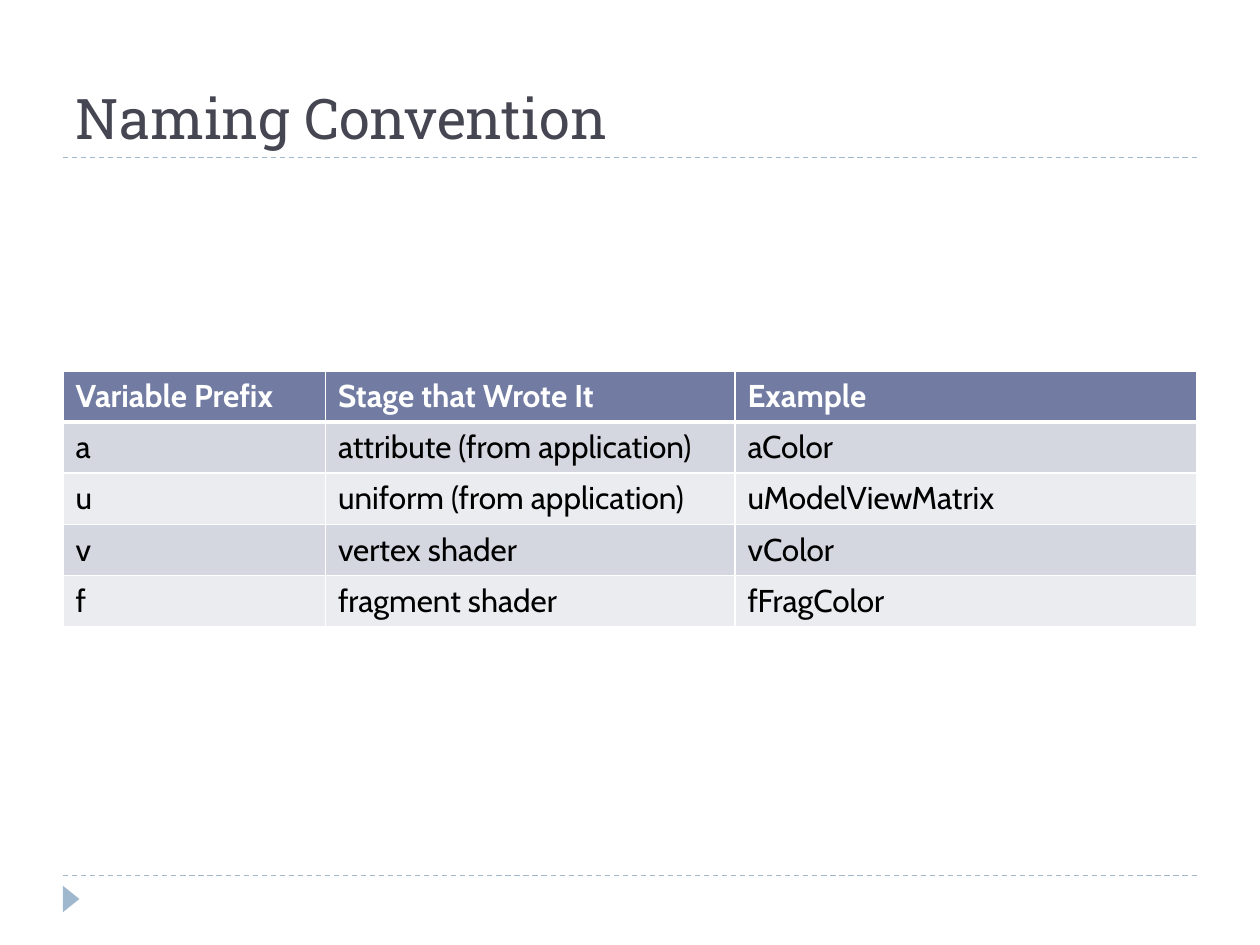
"""Build the slide on naming conventions for shader variables."""
import dataclasses

import lxml.etree
import pptx
import pptx.dml.color
import pptx.enum.dml
import pptx.enum.shapes
import pptx.enum.text
import pptx.oxml.ns
import pptx.util

Pt = pptx.util.Pt


@dataclasses.dataclass(frozen=True)
class Theme:
    title_font: str = "Roboto Slab"
    table_font: str = "Cabin"
    title_size: int = 32
    table_size: int = 18
    title_ink: str = "464653"
    accent: str = "9FB8CD"
    header_fill: str = "727CA3"
    header_ink: str = "FFFFFF"
    body_ink: str = "000000"
    bands: tuple = ("D5D7E0", "EBECF0")
    grid: str = "FFFFFF"


def rgb(value):
    return pptx.dml.color.RGBColor.from_string(value)


def add_child(parent, tag, **attributes):
    return lxml.etree.SubElement(parent, pptx.oxml.ns.qn(tag), **attributes)


class SlideBuilder:
    def __init__(self, slide, theme):
        self.slide = slide
        self.theme = theme

    def format_text(self, frame, font, size, ink, bold=False):
        for paragraph in frame.paragraphs:
            paragraph.alignment = pptx.enum.text.PP_ALIGN.LEFT
            for run in paragraph.runs:
                run.font.name = font
                run.font.size = Pt(size)
                run.font.bold = bold
                run.font.color.rgb = rgb(ink)

    def title(self, text, left, top, width, height):
        title = self.slide.shapes.title
        title.left, title.top, title.width, title.height = map(Pt, (left, top, width, height))
        frame = title.text_frame
        frame.text = text
        frame.auto_size = pptx.enum.text.MSO_AUTO_SIZE.NONE
        frame.vertical_anchor = pptx.enum.text.MSO_ANCHOR.BOTTOM
        self.format_text(frame, self.theme.title_font, self.theme.title_size, self.theme.title_ink)

    def rule(self, left, right, y):
        rule = self.slide.shapes.add_connector(
            pptx.enum.shapes.MSO_CONNECTOR.STRAIGHT, Pt(left), Pt(y), Pt(right), Pt(y))
        rule.line.color.rgb = rgb(self.theme.accent)
        rule.line.width = Pt(0.75)
        rule.line.dash_style = pptx.enum.dml.MSO_LINE.DASH
        add_child(rule._element.spPr, "a:effectLst")

    def marker(self, left, top, width, height):
        marker = self.slide.shapes.add_shape(
            pptx.enum.shapes.MSO_SHAPE.ISOSCELES_TRIANGLE, Pt(left), Pt(top), Pt(width), Pt(height))
        marker.rotation = 90
        marker.shadow.inherit = False
        marker.fill.solid()
        marker.fill.fore_color.rgb = rgb(self.theme.accent)
        marker.line.fill.background()

    def borders(self, cell, row):
        widths = {"L": 1, "R": 1, "T": 3 if row == 1 else 1, "B": 3 if row == 0 else 1}
        properties = cell._tc.get_or_add_tcPr()
        for side, width in widths.items():
            line = add_child(properties, f"a:ln{side}", w=str(int(Pt(width))))
            add_child(add_child(line, "a:solidFill"), "a:srgbClr", val=self.theme.grid)

    def table(self, rows, left, top, column_widths, row_height):
        theme = self.theme
        table = self.slide.shapes.add_table(
            len(rows), len(column_widths), Pt(left), Pt(top),
            Pt(sum(column_widths)), Pt(row_height * len(rows))).table
        for column, width in zip(table.columns, column_widths):
            column.width = Pt(width)
        for r, texts in enumerate(rows):
            table.rows[r].height = Pt(row_height)
            header = r == 0
            fill = theme.header_fill if header else theme.bands[(r - 1) % 2]
            ink = theme.header_ink if header else theme.body_ink
            for c, text in enumerate(texts):
                cell = table.cell(r, c)
                cell.text_frame.text = text
                self.format_text(cell.text_frame, theme.table_font, theme.table_size, ink, header)
                self.borders(cell, r)
                cell.fill.solid()
                cell.fill.fore_color.rgb = rgb(fill)


def main():
    deck = pptx.Presentation()
    deck.slide_width, deck.slide_height = Pt(720), Pt(540)
    builder = SlideBuilder(deck.slides.add_slide(deck.slide_layouts[5]), Theme())
    left, right = 36, 684
    for y in (500.4, 90):
        builder.rule(left, right, y)
    builder.marker(33.1, 509, 15.1, 9.4)
    builder.title("Naming Convention", left, 12, right - left, 78)
    conventions = [
        ("Variable Prefix", "Stage that Wrote It", "Example"),
        ("a", "attribute (from application)", "aColor"),
        ("u", "uniform (from application)", "uModelViewMatrix"),
        ("v", "vertex shader", "vColor"),
        ("f", "fragment shader", "fFragColor"),
    ]
    builder.table(conventions, left, 212, (150, 234, 264), 29.2)
    deck.save("out.pptx")


if __name__ == "__main__":
    main()
